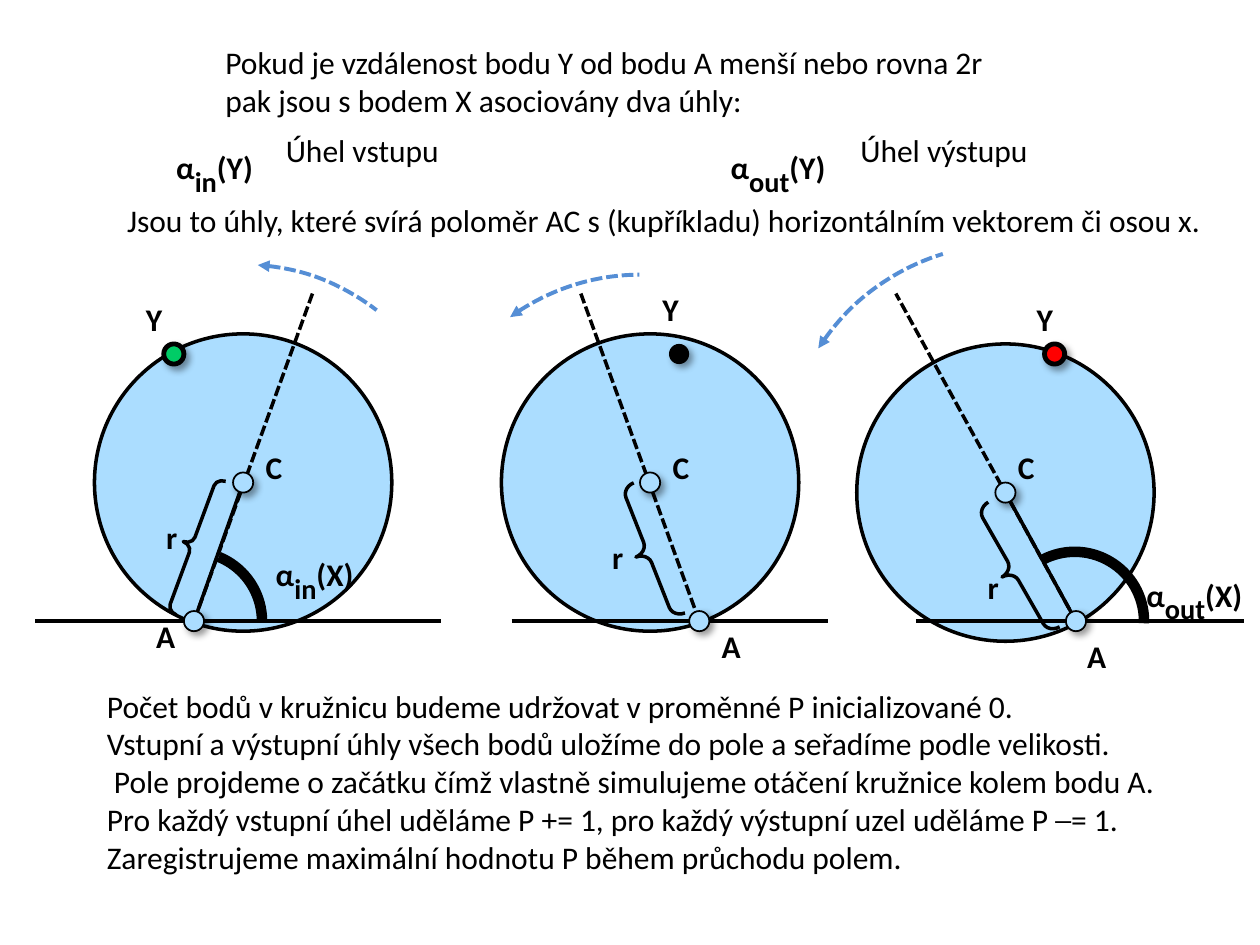
from dataclasses import dataclass

from lxml import etree
from pptx import Presentation
from pptx import util as u
from pptx.dml.color import RGBColor
from pptx.enum import dml, shapes, text
from pptx.oxml.ns import qn


@dataclass(frozen=True)
class Theme:
    font: str = "Calibri"
    size: int = 18
    subscript: int = 28
    ink: str = "000000"
    disc: str = "ABDDFF"
    turn: str = "558ED5"
    enter: str = "00CC66"
    leave: str = "FF0000"
    thin: float = 1
    normal: float = 2
    arrow: float = 2.25
    rim: float = 2.75
    bold: float = 6


def inches(values):
    return [u.Inches(value) for value in values]


class Sketch:
    def __init__(self, page, theme):
        self.page = page
        self.theme = theme

    def outline(self, line, width, colour=None, dashed=False):
        line.color.rgb = RGBColor.from_string(colour or self.theme.ink)
        line.width = u.Pt(width)
        if dashed:
            line.dash_style = dml.MSO_LINE.SQUARE_DOT

    def line(self, start, end, dashed=False):
        link = self.page.shapes.add_connector(
            shapes.MSO_CONNECTOR.STRAIGHT, *inches([*start, *end]))
        self.outline(link.line, self.theme.normal, dashed=dashed)
        etree.SubElement(link._element.spPr, qn("a:effectLst"))

    def shape(self, kind, frame, fill=None, adjust=(), rotation=0):
        item = self.page.shapes.add_shape(kind, *inches(frame))
        item.shadow.inherit = False
        item.rotation = rotation
        for index, value in enumerate(adjust):
            item.adjustments[index] = value
        if fill:
            item.fill.solid()
            item.fill.fore_color.rgb = RGBColor.from_string(fill)
        else:
            item.fill.background()
        return item

    def circle(self, centre, radius, fill, width):
        x, y = centre
        frame = (x - radius, y - radius, 2 * radius, 2 * radius)
        item = self.shape(shapes.MSO_SHAPE.OVAL, frame, fill)
        if width:
            self.outline(item.line, width)
        else:
            item.line.fill.background()
        return item

    def dot(self, centre, fill, width):
        effects = self.circle(centre, 0.08, fill, width)._element.spPr.find(qn("a:effectLst"))
        shadow = etree.SubElement(effects, qn("a:outerShdw"), {
            "blurRad": str(u.Pt(4)), "dist": str(u.Pt(3)),
            "dir": str(45 * 60000), "rotWithShape": "0"})
        colour = etree.SubElement(shadow, qn("a:srgbClr"), val=self.theme.ink)
        etree.SubElement(colour, qn("a:alpha"), val="40000")

    def angle(self, frame, sweep):
        item = self.shape(shapes.MSO_SHAPE.ARC, frame, adjust=sweep)
        self.outline(item.line, self.theme.bold)

    def turn(self, frame, sweep):
        item = self.shape(shapes.MSO_SHAPE.ARC, frame, adjust=sweep)
        self.outline(item.line, self.theme.arrow, self.theme.turn, True)
        etree.SubElement(item._element.spPr.find(qn("a:ln")), qn("a:headEnd"), type="triangle")

    def brace(self, frame, rotation):
        item = self.shape(shapes.MSO_SHAPE.LEFT_BRACE, frame,
                          adjust=(0.43, 0.5), rotation=rotation)
        self.outline(item.line, self.theme.normal)

    def span(self, para, words, bold, subscript=False):
        span = para.add_run()
        span.text = words
        size = self.theme.subscript if subscript else self.theme.size
        formats = {"name": self.theme.font, "size": u.Pt(size), "bold": bold}
        for name, value in formats.items():
            setattr(span.font, name, value)
        span.font.color.rgb = RGBColor.from_string(self.theme.ink)
        if subscript:
            span.font._element.set("baseline", "-25000")

    def box(self, frame):
        body = self.page.shapes.add_textbox(*inches(frame)).text_frame
        formats = {"word_wrap": False, "auto_size": text.MSO_AUTO_SIZE.SHAPE_TO_FIT_TEXT}
        for name, value in formats.items():
            setattr(body, name, value)
        return body

    def words(self, frame, *lines, bold=False):
        body = self.box(frame)
        for index, line in enumerate(lines):
            para = body.add_paragraph() if index else body.paragraphs[0]
            self.span(para, line, bold)

    def label(self, corner, letter):
        self.words((*corner, 0.34, 0.4), letter, bold=True)

    def alpha(self, corner, subscript, point):
        width = 0.86 if subscript == "in" else 1.03
        para = self.box((*corner, width, 0.42)).paragraphs[0]
        self.span(para, "α", True)
        self.span(para, subscript, True, subscript=True)
        self.span(para, f"({point})", True)

    def diagram(self, centre, pivot, point, ray, axis, labels, brace, turn,
                fill, rim, angle=None):
        theme = self.theme
        self.circle(centre, 1.18, theme.disc, theme.normal)
        self.line((axis[0], pivot[1]), (axis[1], pivot[1]))
        self.line(pivot, ray, dashed=True)
        if angle:
            self.line(pivot, centre)
            self.angle(*angle)
        self.brace(*brace)
        for place in (centre, pivot):
            self.dot(place, theme.disc, theme.thin)
        self.dot(point, fill, rim)
        for letter, corner in labels.items():
            self.label(corner, letter)
        self.turn(*turn)


def main():
    deck = Presentation()
    deck.slide_width, deck.slide_height = inches((10, 7.5))
    theme = Theme()
    sketch = Sketch(deck.slides.add_slide(deck.slide_layouts[6]), theme)

    sketch.words((1.69, 0.29, 6.31, 0.71),
                 "Pokud je vzdálenost bodu Y od bodu A menší nebo rovna 2r",
                 "pak jsou s bodem X asociovány dva úhly:")
    sketch.alpha((1.3, 0.99), "in", "Y")
    sketch.words((2.17, 0.99, 1.43, 0.4), "Úhel vstupu")
    sketch.alpha((5.7, 0.99), "out", "Y")
    sketch.words((6.73, 0.99, 1.54, 0.4), "Úhel výstupu")
    sketch.words((0.91, 1.55, 8.78, 0.4),
                 "Jsou to úhly, které svírá poloměr AC s (kupříkladu) horizontálním vektorem či osou x.")

    sketch.diagram(
        centre=(1.93, 3.83), pivot=(1.54, 4.93), point=(1.38, 2.81),
        ray=(2.48, 2.33), axis=(0.28, 3.5),
        labels={"C": (2.01, 3.51), "A": (1.14, 4.85), "Y": (1.06, 2.33), "r": (1.22, 4.06)},
        brace=((1.45, 3.76, 0.15, 1.13), 20.3),
        turn=((0.2, 2.1, 3.46, 3.46), (164.32, 184.66)),
        fill=theme.enter, rim=theme.rim,
        angle=((0.98, 4.38, 1.1, 1.1), (175.23, 215.92)))
    sketch.diagram(
        centre=(5.16, 3.83), pivot=(5.55, 4.93), point=(5.39, 2.81),
        ray=(4.61, 2.33), axis=(4.06, 6.57),
        labels={"C": (5.24, 3.51), "A": (5.63, 4.93), "Y": (5.16, 2.25), "r": (4.76, 4.22)},
        brace=((5.04, 3.83, 0.2, 1.11), 338.5),
        turn=((3.27, 2.18, 3.62, 3.78), (141.84, 161.92)),
        fill=theme.ink, rim=0)
    sketch.diagram(
        centre=(7.98, 3.91), pivot=(8.54, 4.93), point=(8.37, 2.81),
        ray=(7.11, 2.33), axis=(7.27, 9.87),
        labels={"C": (7.98, 3.51), "A": (8.53, 5.01), "Y": (8.13, 2.33), "r": (7.74, 4.46)},
        brace=((7.94, 3.96, 0.2, 1.14), 330.2),
        turn=((6.18, 1.94, 3.62, 3.78), (129.28, 152.64)),
        fill=theme.leave, rim=theme.rim,
        angle=((7.98, 4.38, 1.1, 1.1), (145.95, 1.06)))
    sketch.alpha((2.09, 4.22), "in", "X")
    sketch.alpha((9, 4.38), "out", "X")

    sketch.words((0.75, 5.4, 8.62, 1.62),
                 "Počet bodů v kružnicu budeme udržovat v proměnné P inicializované 0.",
                 "Vstupní a výstupní úhly všech bodů uložíme do pole a seřadíme podle velikosti.",
                 " Pole projdeme o začátku čímž vlastně simulujeme otáčení kružnice kolem bodu A.",
                 "Pro každý vstupní úhel uděláme P += 1, pro každý výstupní uzel uděláme P ─= 1.",
                 "Zaregistrujeme maximální hodnotu P během průchodu polem.")
    deck.save("out.pptx")


if __name__ == "__main__":
    main()
